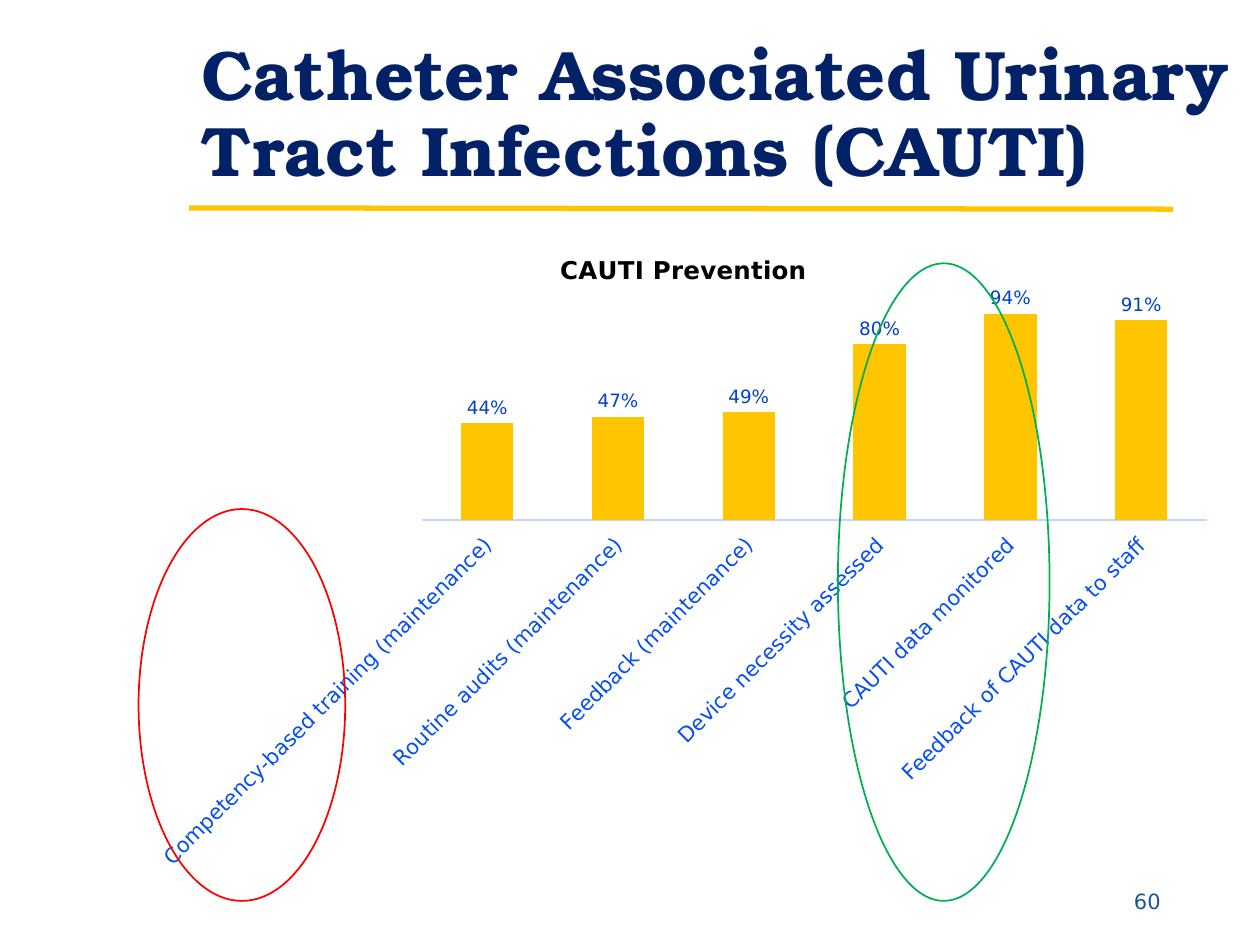
from dataclasses import dataclass

from lxml import etree
from pptx import Presentation
from pptx.chart.data import CategoryChartData
from pptx.dml.color import RGBColor
from pptx.enum.chart import XL_CHART_TYPE as ChartType
from pptx.enum.chart import XL_LABEL_POSITION as LabelPos
from pptx.enum.chart import XL_TICK_LABEL_POSITION as TickLabelPos
from pptx.enum.chart import XL_TICK_MARK as TickMark
from pptx.enum.shapes import MSO_CONNECTOR as Connector
from pptx.enum.shapes import MSO_SHAPE as Shape
from pptx.enum.text import MSO_ANCHOR as Anchor
from pptx.enum.text import PP_ALIGN as Align
from pptx.oxml import parse_xml
from pptx.oxml.ns import nsdecls, qn
from pptx.util import Inches, Pt


@dataclass(frozen=True)
class Theme:
    serif: str = "TeX Gyre Bonum"
    sans: str = "DejaVu Sans"
    navy: str = "022167"
    gold: str = "FFC600"
    number: str = "1A578E"
    category: str = "054EF2"
    value: str = "0441CA"
    axis: str = "C3D5FE"
    black: str = "000000"
    green: str = "00B050"
    red: str = "FF0000"
    title_pt: float = 40
    number_pt: float = 12
    chart_title_pt: float = 14
    category_pt: float = 12
    value_pt: float = 10.5
    chart_pt: float = 10


T = Theme()

PRACTICES = {
    "Competency-based training (maintenance)": 0.44,
    "Routine audits (maintenance)": 0.47,
    "Feedback (maintenance)": 0.49,
    "Device necessity assessed": 0.80,
    "CAUTI data monitored": 0.94,
    "Feedback of CAUTI data to staff": 0.91,
}


def inches(box):
    return [Inches(v) for v in box]


def style_font(font, name, size, color, bold=False):
    font.name, font.size, font.bold = name, Pt(size), bold
    font.color.rgb = RGBColor.from_string(color)


def style_line(line, color, width):
    line.color.rgb = RGBColor.from_string(color)
    line.width = Pt(width)


def add_text(s, box, text, font, anchor, align=Align.LEFT, spacing=1.0):
    tf = s.shapes.add_textbox(*inches(box)).text_frame
    tf.word_wrap = True
    tf.vertical_anchor = anchor
    p = tf.paragraphs[0]
    p.alignment, p.line_spacing = align, spacing
    r = p.add_run()
    r.text = text
    style_font(r.font, *font)


def add_rule(s, start, end):
    rule = s.shapes.add_connector(Connector.STRAIGHT, *inches(start + end))
    style_line(rule.line, T.gold, 3)
    etree.SubElement(rule._element.spPr, qn("a:effectLst"))


def set_plot_area(chart, x, y, w, h):
    """Fix the inner plot area, in fractions of the chart."""
    area = chart._chartSpace.chart.plotArea
    for old in area.findall(qn("c:layout")):
        area.remove(old)
    sizes = "".join(f'<c:{k} val="{v}"/>' for k, v in zip("xywh", (x, y, w, h)))
    area.insert(0, parse_xml(
        f'<c:layout {nsdecls("c")}><c:manualLayout><c:layoutTarget val="inner"/>'
        f'<c:xMode val="edge"/><c:yMode val="edge"/>{sizes}'
        "</c:manualLayout></c:layout>"))


def add_prevention_chart(s, box):
    data = CategoryChartData(number_format="0%")
    data.categories = list(PRACTICES)
    data.add_series("Series 1", list(PRACTICES.values()))
    chart = s.shapes.add_chart(
        ChartType.COLUMN_CLUSTERED, *inches(box), data).chart
    style_font(chart.font, T.sans, T.chart_pt, T.navy)
    chart.has_legend = False
    set_plot_area(chart, 0.26, 0.11, 0.72, 0.34)

    # Chart title
    chart.has_title = True
    r = chart.chart_title.text_frame.paragraphs[0].add_run()
    r.text = "CAUTI Prevention"
    style_font(r.font, T.sans, T.chart_title_pt, T.black, True)
    chart.chart_title.include_in_layout = False

    # Axes
    cat = chart.category_axis
    cat.major_tick_mark = cat.minor_tick_mark = TickMark.NONE
    cat.tick_label_position = TickLabelPos.LOW
    style_font(cat.tick_labels.font, T.sans, T.category_pt, T.category)
    cat._element.txPr.bodyPr.set("rot", "-2700000")
    style_line(cat.format.line, T.axis, 0.75)
    val = chart.value_axis
    val.minimum_scale, val.maximum_scale = 0, 1
    val.has_major_gridlines = False
    val.visible = False

    # Columns and value labels
    plot = chart.plots[0]
    plot.gap_width, plot.overlap = 150, -25
    plot.vary_by_categories = False
    series = plot.series[0]
    series.format.fill.solid()
    series.format.fill.fore_color.rgb = RGBColor.from_string(T.gold)
    labels = series.data_labels
    labels.show_value = True
    labels.number_format, labels.number_format_is_linked = "0%", False
    labels.position = LabelPos.OUTSIDE_END
    style_font(labels.font, T.sans, T.value_pt, T.value)


def add_highlight(s, box, color):
    ring = s.shapes.add_shape(Shape.OVAL, *inches(box))
    ring.shadow.inherit = False
    ring.fill.background()
    style_line(ring.line, color, 1)


def main():
    prs = Presentation()
    prs.slide_width, prs.slide_height = Inches(10), Inches(7.5)
    s = prs.slides.add_slide(prs.slide_layouts[6])

    # Heading and page number
    add_rule(s, (1.5, 1.65), (9.31, 1.66))
    add_text(s, (1.5, 0.12, 8.38, 1.45),
             "Catheter Associated Urinary Tract Infections (CAUTI)",
             (T.serif, T.title_pt, T.navy, True), Anchor.BOTTOM, spacing=0.9)
    add_text(s, (8, 6.95, 1.31, 0.4), "60",
             (T.sans, T.number_pt, T.number), Anchor.MIDDLE, Align.RIGHT)

    # Chart with its highlighted practices
    add_prevention_chart(s, (1.1, 1.82, 8.65, 5.13))
    add_highlight(s, (6.65, 2.09, 1.68, 5.06), T.green)
    add_highlight(s, (1.1, 4.04, 1.64, 3.11), T.red)

    prs.save("out.pptx")


if __name__ == "__main__":
    main()
